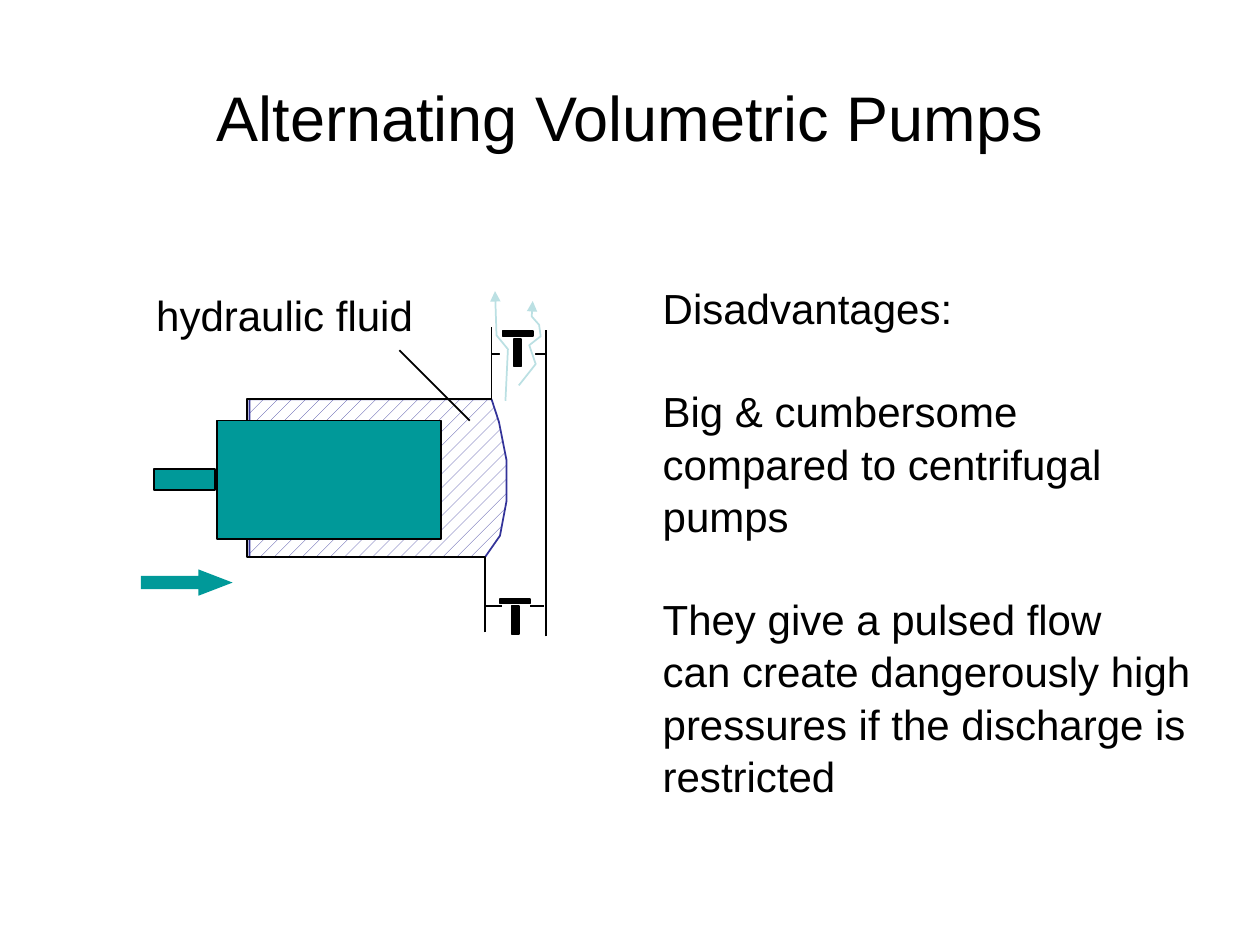
from dataclasses import dataclass

from lxml.etree import SubElement
from pptx import Presentation
from pptx.dml.color import RGBColor as RGB
from pptx.enum.dml import MSO_PATTERN as Pattern
from pptx.enum.shapes import MSO_CONNECTOR as Link, MSO_SHAPE as Kind
from pptx.enum.text import MSO_ANCHOR as Anchor, PP_ALIGN as Align
from pptx.oxml.ns import qn
from pptx.util import Cm, Pt


@dataclass(frozen=True)
class Theme:
    font: str = "Arial"
    title_size: float = 36
    text_size: float = 24
    leading: float = 1.04
    gap: float = 28.8
    line_width: float = 1
    ink: RGB = RGB(0x00, 0x00, 0x00)
    paper: RGB = RGB(0xFF, 0xFF, 0xFF)
    metal: RGB = RGB(0x00, 0x99, 0x99)
    fluid: RGB = RGB(0x33, 0x33, 0x99)
    flow: RGB = RGB(0xBB, 0xE0, 0xE3)


class Sketch:
    def __init__(self, slide, theme):
        self.slide = slide
        self.theme = theme

    def stroke(self, sp, color):
        sp.line.color.rgb = color
        sp.line.width = Pt(self.theme.line_width)

    def format_text(self, tf, size, align=Align.LEFT):
        for p in tf.paragraphs:
            p.alignment = align
            for r in p.runs:
                r.font.name = self.theme.font
                r.font.size = Pt(size)
                r.font.color.rgb = self.theme.ink

    def title(self, text, x, y, w, h):
        sp = self.slide.shapes.title
        sp.left, sp.top, sp.width, sp.height = Cm(x), Cm(y), Cm(w), Cm(h)
        tf = sp.text_frame
        tf.text = text
        tf.vertical_anchor = Anchor.MIDDLE
        self.format_text(tf, self.theme.title_size, Align.CENTER)

    def text(self, text, x, y, w, h, wrap=True):
        sp = self.slide.shapes.add_textbox(Cm(x), Cm(y), Cm(w), Cm(h))
        tf = sp.text_frame
        tf.text = text
        tf.word_wrap = wrap
        self.format_text(tf, self.theme.text_size)
        return tf

    def group(self):
        return self.slide.shapes.add_group_shape().shapes

    def block(self, x, y, w, h, fill, line=None, kind=Kind.RECTANGLE, parent=None):
        shapes = self.slide.shapes if parent is None else parent
        sp = shapes.add_shape(kind, Cm(x), Cm(y), Cm(w), Cm(h))
        sp.shadow.inherit = False
        sp.fill.solid()
        sp.fill.fore_color.rgb = fill
        if line is None:
            sp.line.fill.background()
        else:
            self.stroke(sp, line)
        return sp

    def line(self, x1, y1, x2, y2, parent=None):
        shapes = self.slide.shapes if parent is None else parent
        sp = shapes.add_connector(Link.STRAIGHT, Cm(x1), Cm(y1), Cm(x2), Cm(y2))
        self.stroke(sp, self.theme.ink)
        SubElement(sp._element.spPr, qn("a:effectLst"))

    def outline(self, points, color, close=False, arrow=False):
        first, *rest = [(Cm(x), Cm(y)) for x, y in points]
        builder = self.slide.shapes.build_freeform(*first)
        builder.add_line_segments(rest, close=close)
        sp = builder.convert_to_shape()
        sp.shadow.inherit = False
        sp.fill.background()
        self.stroke(sp, color)
        if arrow:
            SubElement(sp.line._get_or_add_ln(), qn("a:tailEnd"), type="triangle")
        return sp

    def valve(self, x, y):
        ink, parent = self.theme.ink, self.group()
        self.block(x, y, 0.61, 0.1, ink, ink, parent=parent)
        self.block(x + 0.23, y + 0.15, 0.15, 0.56, ink, ink, parent=parent)


def main():
    prs = Presentation()
    prs.slide_width, prs.slide_height = Cm(25.4), Cm(19.05)
    theme = Theme()
    s = Sketch(prs.slides.add_slide(prs.slide_layouts[5]), theme)

    s.title("Alternating Volumetric Pumps", 1.27, 0.76, 22.86, 3.18)

    left, top, bottom = 4.98, 8.05, 11.23
    inlet, outlet, wall = 9.78, 9.91, 11

    chamber = s.outline(
        [(5.03, top), (5.03, bottom), (inlet, bottom), (10.08, 10.8),
         (10.21, 10.11), (10.21, 9.27), (10.06, 8.51), (outlet, top)],
        theme.fluid, close=True)
    chamber.fill.patterned()
    chamber.fill.pattern = Pattern.PERCENT_10
    chamber.fill.fore_color.rgb = theme.fluid
    chamber.fill.back_color.rgb = theme.paper

    tf = s.text(
        "Disadvantages:\n"
        "Big & cumbersome compared to centrifugal pumps\n"
        "They give a pulsed flow\n"
        "can create dangerously high pressures if the discharge is restricted",
        13.11, 5.54, 11.43, 10.08)
    for p in tf.paragraphs:
        p.line_spacing = theme.leading
    for p in tf.paragraphs[1:3]:
        p.space_before = Pt(theme.gap)

    s.outline([(inlet, 12.75), (inlet, bottom), (left, bottom),
               (left, top), (outlet, top), (outlet, 6.6)], theme.ink)

    piston = s.group()
    s.block(4.37, 8.48, 4.52, 2.39, theme.metal, theme.ink, parent=piston)
    s.block(3.1, 9.45, 1.24, 0.43, theme.metal, theme.ink, parent=piston)

    s.line(wall, 12.83, wall, 6.65)
    arrow = s.block(2.84, 11.48, 1.85, 0.53, theme.metal, kind=Kind.RIGHT_ARROW)
    arrow.adjustments[0] = 0.5
    arrow.adjustments[1] = 1.3

    seat = s.group()
    s.line(outlet, 7.14, wall, 7.14, parent=seat)
    s.block(10.08, 6.99, 0.71, 0.38, theme.paper, parent=seat)
    s.valve(10.13, 6.68)
    s.valve(10.08, 12.07)
    for x1, x2 in ((9.8, 10.11), (10.69, 10.97)):
        s.line(x1, 12.22, x2, 12.22)

    streams = (
        [(10.19, 8.08), (10.24, 7.04), (10.01, 6.76), (9.98, 5.87)],
        [(10.46, 7.77), (10.8, 7.34), (10.67, 6.96), (10.9, 6.78),
         (10.87, 6.55), (10.72, 6.38), (10.74, 6.07)],
    )
    for points in streams:
        s.outline(points, theme.flow, arrow=True)

    s.text("hydraulic fluid", 2.9, 5.72, 5.74, 1.27, wrap=False)
    s.line(8.05, 7.06, 9.47, 8.48)

    prs.save("out.pptx")


if __name__ == "__main__":
    main()
